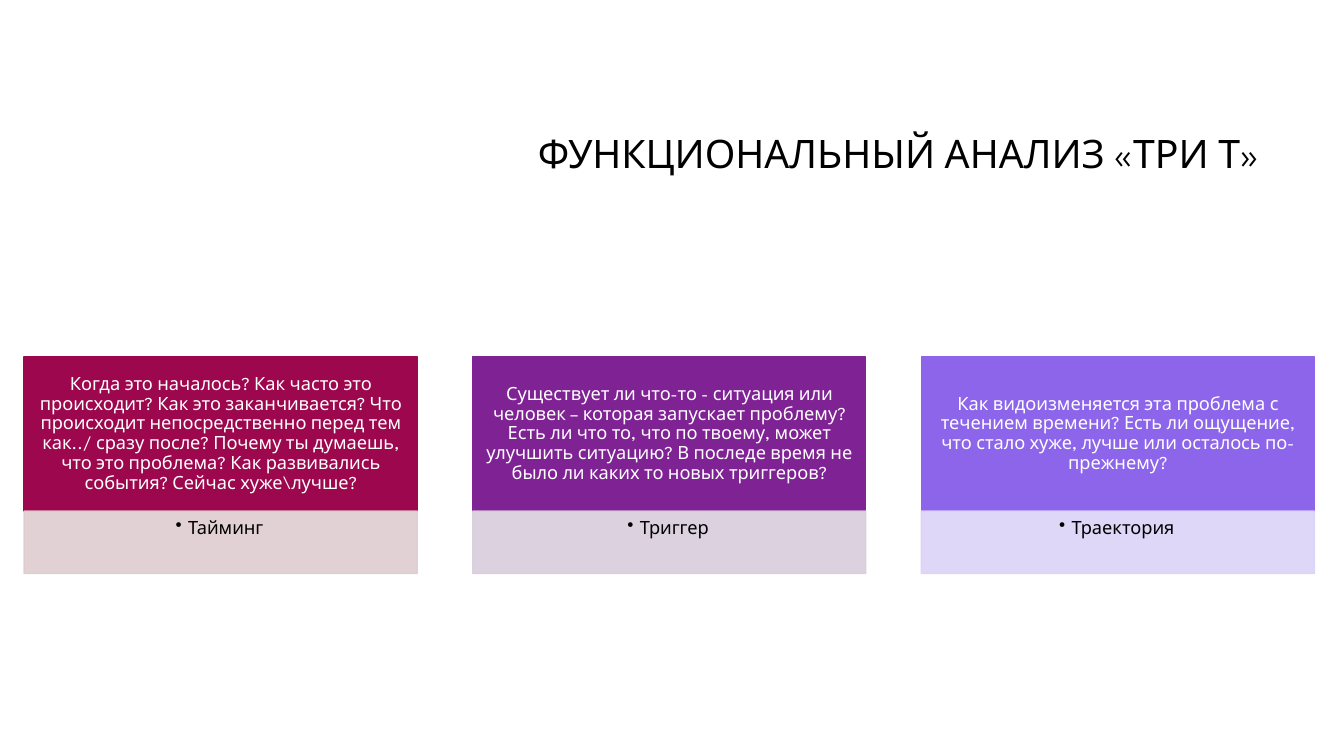
from lxml import etree
from pptx import Presentation
from pptx.dml.color import RGBColor
from pptx.enum.shapes import MSO_SHAPE
from pptx.enum.text import MSO_ANCHOR, PP_ALIGN
from pptx.oxml.ns import qn
from pptx.util import Pt

RECT = MSO_SHAPE.RECTANGLE
TOP, MID = MSO_ANCHOR.TOP, MSO_ANCHOR.MIDDLE
MIDDLE, RIGHT = PP_ALIGN.CENTER, PP_ALIGN.RIGHT
BLACK = RGBColor(0x00, 0x00, 0x00)
WHITE = RGBColor(0xFF, 0xFF, 0xFF)
WINE = RGBColor(0x9D, 0x07, 0x4E)
ROSE = RGBColor(0xDF, 0xCC, 0xD0)
PLUM = RGBColor(0x7F, 0x22, 0x94)
MAUVE = RGBColor(0xD8, 0xCD, 0xDC)
VIOLET = RGBColor(0x8D, 0x65, 0xEA)
LILAC = RGBColor(0xDB, 0xD3, 0xF7)
FONT = "League Spartan"

TITLE = "ФУНКЦИОНАЛЬНЫЙ АНАЛИЗ «ТРИ Т»"
CARDS = [
    ("Тайминг", WINE, ROSE,
     "Когда это началось? Как часто это происходит? Как это заканчивается? "
     "Что происходит непосредственно перед тем как../ сразу после? "
     "Почему ты думаешь, что это проблема? Как развивались события? "
     "Сейчас хуже\\лучше?"),
    ("Триггер", PLUM, MAUVE,
     "Существует ли что-то - ситуация или человек – которая запускает "
     "проблему? Есть ли что то, что по твоему, может улучшить ситуацию? "
     "В последе время не было ли каких то новых триггеров?"),
    ("Траектория", VIOLET, LILAC,
     "Как видоизменяется эта проблема с течением времени? Есть ли ощущение, "
     "что стало хуже, лучше или осталось по-прежнему?"),
]

LEFT, HEAD_Y = 17.28, 254.88
WIDE, PITCH = 280.8, 320.4
HEAD_H, BAND_H = 110.16, 44.64


def write(shape, text, size=13, color=BLACK, align=MIDDLE, anchor=MID,
          pads=(7.2, 3.6, 7.2, 3.6), bullet=False):
    frame = shape.text_frame
    frame.word_wrap = True
    frame.vertical_anchor = anchor
    frame.margin_left, frame.margin_top = Pt(pads[0]), Pt(pads[1])
    frame.margin_right, frame.margin_bottom = Pt(pads[2]), Pt(pads[3])
    para = frame.paragraphs[0]
    if bullet:
        props = para._p.get_or_add_pPr()
        props.set("marL", str(Pt(9)))
        props.set("indent", str(Pt(-9)))
        etree.SubElement(props, qn("a:buChar")).set("char", "•")
    para.alignment = align
    para.line_spacing = 0.9
    run = para.add_run()
    run.text = text
    run.font.name = FONT
    run.font.size = Pt(size)
    run.font.color.rgb = color


def block(slide, x, y, high, color, alpha=100):
    shape = slide.shapes.add_shape(RECT, Pt(x), Pt(y), Pt(WIDE), Pt(high))
    shape.shadow.inherit = False
    shape.fill.solid()
    shape.fill.fore_color.rgb = color
    shape.line.color.rgb = color
    shape.line.width = Pt(1)
    if alpha < 100:
        for tint in shape._element.spPr.iter(qn("a:srgbClr")):
            etree.SubElement(tint, qn("a:alpha")).set("val", str(alpha * 1000))
    return shape


def main():
    deck = Presentation()
    deck.slide_width, deck.slide_height = Pt(960), Pt(540)
    slide = deck.slides.add_slide(deck.slide_layouts[6])
    title = slide.shapes.add_textbox(Pt(228.24), Pt(60.48), Pt(678.24), Pt(101.52))
    write(title, TITLE, size=28, align=RIGHT)
    for i, (name, dark, light, ask) in enumerate(CARDS):
        x = LEFT + i * PITCH
        head = block(slide, x, HEAD_Y, HEAD_H, dark)
        write(head, ask, color=WHITE, pads=(7.2, 4.32, 7.2, 4.32))
        band = block(slide, x, HEAD_Y + HEAD_H, BAND_H, light, alpha=90)
        write(band, name, anchor=TOP, pads=(5.46, 5.46, 7.28, 8.19), bullet=True)
    deck.save("out.pptx")


if __name__ == "__main__":
    main()
